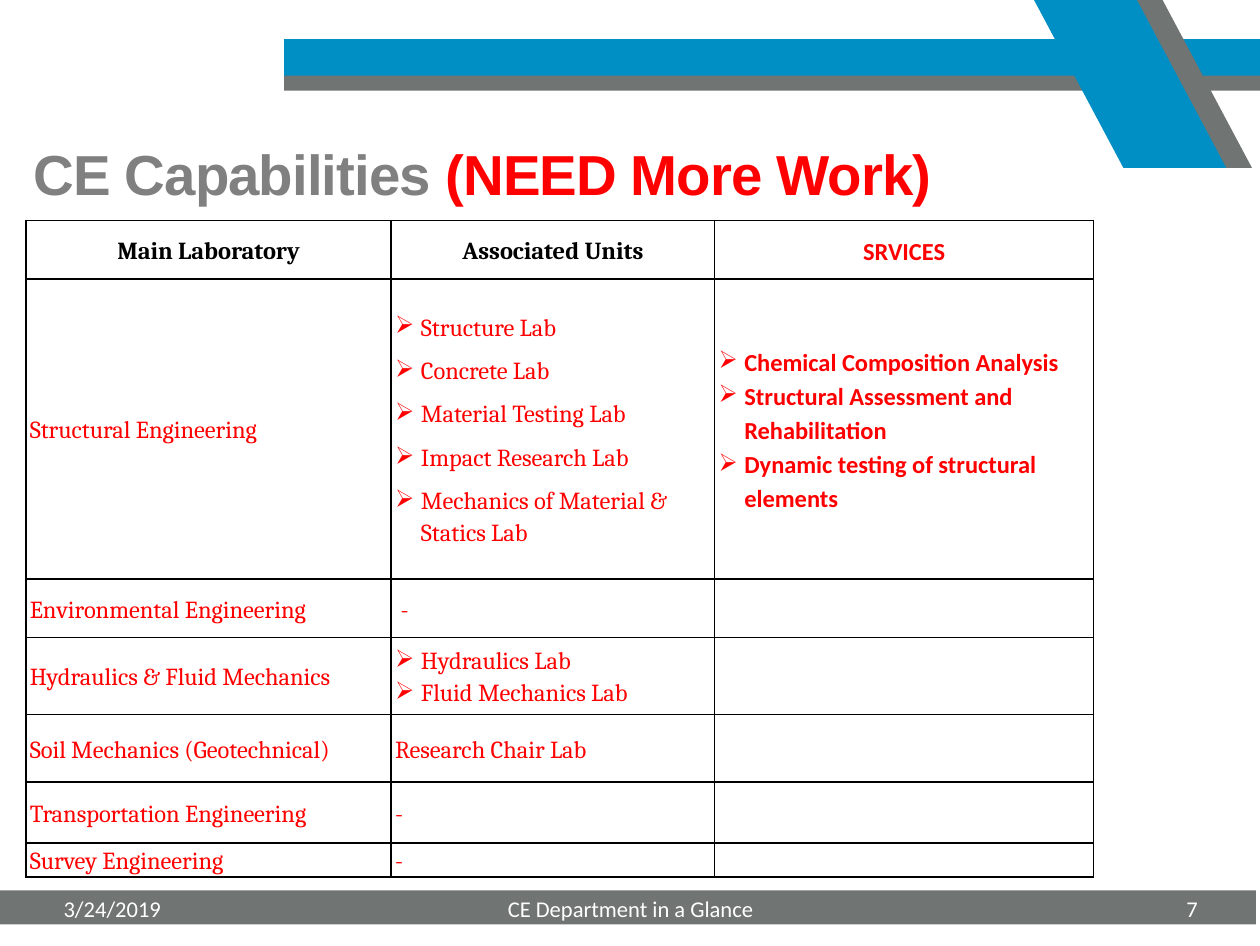
from lxml.etree import SubElement
from pptx import Presentation
from pptx.dml.color import RGBColor
from pptx.enum.shapes import MSO_SHAPE as SHAPE
from pptx.enum.text import MSO_ANCHOR as ANCHOR, PP_ALIGN as ALIGN
from pptx.oxml.ns import qn
from pptx.util import Inches, Pt

COLORS = {"gray": "707473", "blue": "008FC4", "title": "808080",
          "red": "FF0000", "black": "000000", "white": "FFFFFF"}
HEADERS = [("Main Laboratory", "Cambria", "black"),
           ("Associated Units", "Cambria", "black"),
           ("SRVICES", "Calibri", "red")]
COLS = [2.7, 2.39, 2.8]
HEADER_HEIGHT = 0.43
# Height, laboratory, units, services; a list is bulleted
LABS = [
    (2.22, "Structural Engineering",
     ["Structure Lab", "Concrete Lab", "Material Testing Lab",
      "Impact Research Lab", "Mechanics of Material & Statics Lab"],
     ["Chemical Composition Analysis",
      "Structural Assessment and Rehabilitation",
      "Dynamic testing of structural elements"]),
    (0.43, "Environmental Engineering", "-", ""),
    (0.57, "Hydraulics & Fluid Mechanics",
     ["Hydraulics Lab", "Fluid Mechanics Lab"], ""),
    (0.5, "Soil Mechanics (Geotechnical)", "Research Chair Lab", ""),
    (0.45, "Transportation Engineering", "-", ""),
    (0.25, "Survey Engineering", "-", ""),
]


def rgb(name):
    return RGBColor.from_string(COLORS[name])


def paint(sp, color):
    sp.shadow.inherit = False
    sp.fill.solid()
    sp.fill.fore_color.rgb = rgb(color)
    sp.line.fill.background()


def add_bar(s, x, y, w, h, color):
    paint(s.shapes.add_shape(SHAPE.RECTANGLE, Inches(x), Inches(y),
                             Inches(w), Inches(h)), color)


def add_run(p, text, size, font, color, bold=False):
    r = p.add_run()
    r.text = text
    r.font.size = Pt(size)
    r.font.name = font
    r.font.bold = bold
    r.font.color.rgb = rgb(color)
    return r


def add_text(s, x, y, w, h):
    tf = s.shapes.add_textbox(Inches(x), Inches(y), Inches(w), Inches(h)).text_frame
    tf.word_wrap = True
    tf.margin_left = tf.margin_right = tf.margin_top = tf.margin_bottom = 0
    return tf


def add_banner(s, x, y, w):
    # Horizontal stripes
    add_bar(s, x, y + 0.55, w, 0.12, "gray")
    add_bar(s, x, y + 0.29, w, 0.27, "blue")
    # Slanted bands
    for left, color in ((x + 5.73, "gray"), (x + 5.54, "blue")):
        points = [(left, y), (left + 0.66, y + 1.24),
                  (left + 1.42, y + 1.24), (left + 0.76, y)]
        points = [(Inches(px), Inches(py)) for px, py in points]
        fb = s.shapes.build_freeform(*points[0])
        fb.add_line_segments(points[1:], close=True)
        paint(fb.convert_to_shape(), color)


def add_title(s, x, y, w, h):
    tf = add_text(s, x, y, w, h)
    tf.margin_top = Inches(0.01)
    for text, color in (("CE Capabilities ", "title"), ("(NEED More Work)", "red")):
        r = add_run(tf.paragraphs[0], text, 30, "Arial", color, True)
        r.font._element.set("spc", "-50")


def add_footer(s, x, y, w, h):
    add_bar(s, x, y, w, h, "gray")
    for dx, width, text, align in ((0.5, 2.14, "3/24/2019", ALIGN.LEFT),
                                   (3.2, 2.98, "CE Department in a Glance", ALIGN.CENTER),
                                   (6.74, 2.14, "7", ALIGN.RIGHT)):
        p = add_text(s, x + dx, y + 0.03, width, 0.3).paragraphs[0]
        p.alignment = align
        add_run(p, text, 12, "Calibri", "white")


def set_borders(cell):
    tcPr = cell._tc.get_or_add_tcPr()
    for side in ("a:lnL", "a:lnR", "a:lnT", "a:lnB"):
        ln = SubElement(tcPr, qn(side), w=str(Pt(1)))
        fill = SubElement(ln, qn("a:solidFill"))
        SubElement(fill, qn("a:srgbClr"), val=COLORS["black"])


def set_bullet(p):
    pPr = p._p.get_or_add_pPr()
    pPr.set("marL", str(Inches(0.19)))
    pPr.set("indent", str(Inches(-0.19)))
    SubElement(pPr, qn("a:buChar"), char="➢")


def fill_cell(cell, content, font, color, bold, align=ALIGN.LEFT, gap=0):
    set_borders(cell)
    cell.fill.background()
    cell.vertical_anchor = ANCHOR.MIDDLE
    cell.margin_left = cell.margin_right = Inches(0.03)
    cell.margin_top = cell.margin_bottom = 0
    tf = cell.text_frame
    if not content:
        SubElement(tf.paragraphs[0]._p, qn("a:endParaRPr"), sz="1000")
        return
    bulleted = isinstance(content, list)
    for i, text in enumerate(content if bulleted else [content]):
        p = tf.add_paragraph() if i else tf.paragraphs[0]
        p.alignment = align
        p.line_spacing = 1.15
        if i and gap:
            p.space_before = Pt(gap)
        if bulleted:
            set_bullet(p)
        add_run(p, text, 13, font, color, bold)


def add_lab_table(s, x, y):
    heights = [HEADER_HEIGHT] + [lab[0] for lab in LABS]
    table = s.shapes.add_table(len(heights), len(COLS), Inches(x), Inches(y),
                               Inches(sum(COLS)), Inches(sum(heights))).table
    table.first_row = table.horz_banding = False
    for col, width in zip(table.columns, COLS):
        col.width = Inches(width)
    for row, height in zip(table.rows, heights):
        row.height = Inches(height)
    # Header row
    for j, (text, font, color) in enumerate(HEADERS):
        fill_cell(table.cell(0, j), text, font, color, True, ALIGN.CENTER)
    # Laboratory rows
    for i, (_, lab, units, services) in enumerate(LABS, 1):
        gap = 6 if len(units) == 5 else 0
        fill_cell(table.cell(i, 0), lab, "Cambria", "red", False)
        fill_cell(table.cell(i, 1), units, "Cambria", "red", False, gap=gap)
        fill_cell(table.cell(i, 2), services, "Calibri", "red", True)
    # The environmental dash sits slightly further in
    table.cell(2, 1).margin_left = Inches(0.07)


def main():
    prs = Presentation()
    prs.slide_width, prs.slide_height = Inches(9.31), Inches(6.99)
    s = prs.slides.add_slide(prs.slide_layouts[6])
    add_banner(s, 2.1, 0, 7.21)
    add_title(s, 0.25, 1.02, 6.92, 0.52)
    add_lab_table(s, 0.19, 1.63)
    add_footer(s, -0.03, 6.58, 9.31, 0.25)
    prs.save("out.pptx")


if __name__ == "__main__":
    main()
